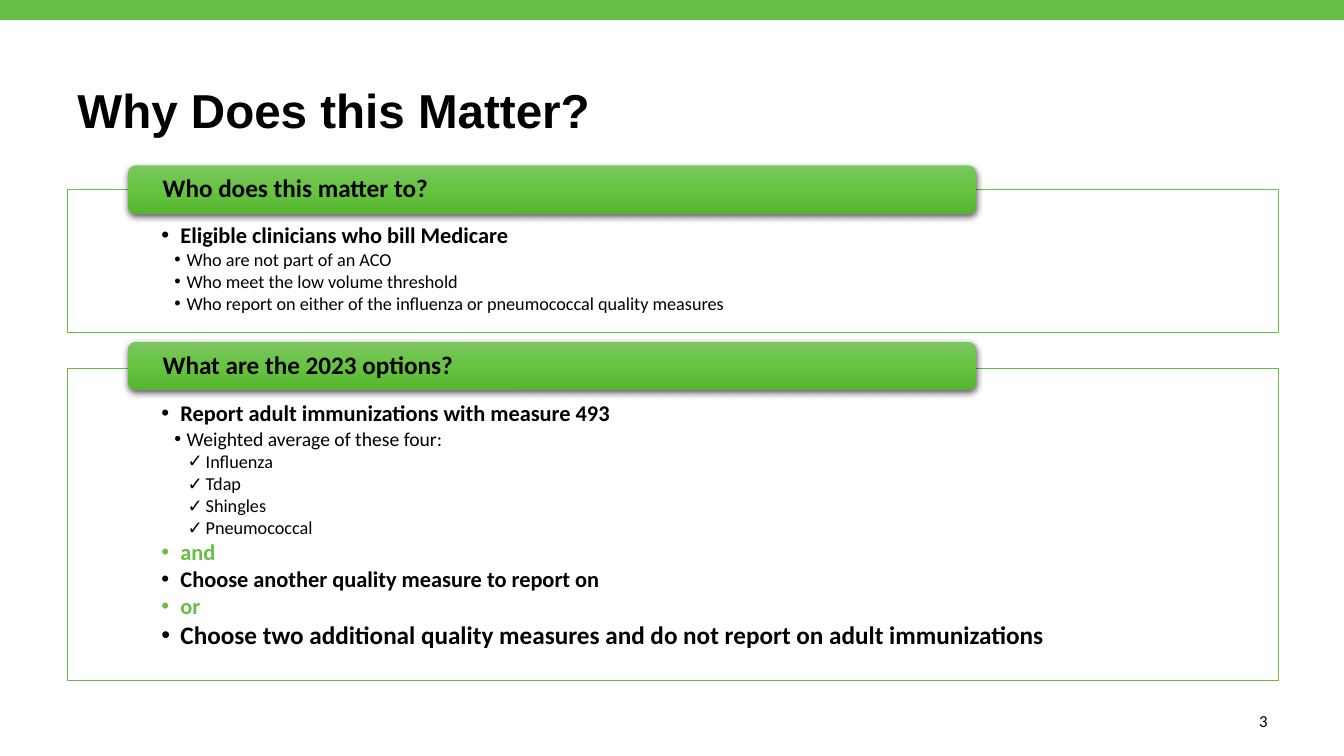
from lxml.etree import SubElement
from pptx import Presentation
from pptx.dml.color import RGBColor
from pptx.enum.shapes import MSO_SHAPE
from pptx.enum.text import MSO_ANCHOR, PP_ALIGN
from pptx.oxml.ns import qn
from pptx.util import Inches, Pt

GREEN, BLACK, WHITE = "69BE46", "000000", "FFFFFF"
HEADER_GRADIENT = [(0, "7BC662"), (50, "66C440"), (100, "58B532")]
BULLETS = {1: ("•", 0.19, -0.19), 2: ("•", 0.25, -0.12), 3: ("✓", 0.44, -0.18)}
LEFT, WIDTH = 0.67, 12.01

SECTIONS = [
    ("Who does this matter to?", 1.88, 1.42, 1.64, [
        (1, 16, BLACK, "Eligible clinicians who bill Medicare"),
        (2, 13, BLACK, "Who are not part of an ACO"),
        (2, 13, BLACK, "Who meet the low volume threshold"),
        (2, 13, BLACK, "Who report on either of the influenza or pneumococcal quality measures"),
    ]),
    ("What are the 2023 options?", 3.65, 3.1, 3.39, [
        (1, 16, BLACK, "Report adult immunizations with measure 493"),
        (2, 14, BLACK, "Weighted average of these four:"),
        (3, 13, BLACK, "Influenza"),
        (3, 13, BLACK, "Tdap"),
        (3, 13, BLACK, "Shingles"),
        (3, 13, BLACK, "Pneumococcal"),
        (1, 16, GREEN, "and"),
        (1, 16, BLACK, "Choose another quality measure to report on"),
        (1, 16, GREEN, "or"),
        (1, 18, BLACK, "Choose two additional quality measures and do not report on adult immunizations"),
    ]),
]


def color(value):
    return RGBColor.from_string(value)


class SlideBuilder:
    """Draws styled elements on the current slide."""

    def __init__(self, slide):
        self.shapes = slide.shapes

    def style(self, paragraph, text, size, ink=BLACK, bold=False, font="Calibri"):
        paragraph.text = text
        paragraph.font.name = font
        paragraph.font.size = Pt(size)
        paragraph.font.bold = bold
        paragraph.font.color.rgb = color(ink)

    def frame(self, box, insets, anchor):
        frame = box.text_frame
        frame.word_wrap = True
        frame.vertical_anchor = anchor
        frame.margin_left, frame.margin_top, frame.margin_right, frame.margin_bottom = map(Inches, insets)
        return frame

    def label(self, area, text, size, align=PP_ALIGN.LEFT, spacing=1.0, **look):
        box = self.shapes.add_textbox(*map(Inches, area))
        para = self.frame(box, (0.1, 0.05, 0.1, 0.05), MSO_ANCHOR.MIDDLE).paragraphs[0]
        para.alignment = align
        para.line_spacing = spacing
        self.style(para, text, size, **look)

    def block(self, area, fill=None, kind=MSO_SHAPE.RECTANGLE):
        shape = self.shapes.add_shape(kind, *map(Inches, area))
        shape.shadow.inherit = False
        shape.line.fill.background()
        if fill:
            shape.fill.solid()
            shape.fill.fore_color.rgb = color(fill)
        return shape

    def bullet(self, paragraph, level):
        mark, margin, indent = BULLETS[level]
        properties = paragraph._p.get_or_add_pPr()
        properties.set("marL", str(Inches(margin)))
        properties.set("indent", str(Inches(indent)))
        SubElement(properties, qn("a:buFont"), typeface="Arial")
        SubElement(properties, qn("a:buChar"), char=mark)

    def panel(self, top, height, items):
        panel = self.block((LEFT, top, WIDTH, height), WHITE)
        panel.line.color.rgb = color(GREEN)
        panel.line.width = Pt(0.5)
        white = panel._element.spPr.find(qn("a:solidFill"))[0]
        SubElement(white, qn("a:alpha"), val="90000")
        frame = self.frame(panel, (0.93, 0.34, 0.93, 0.12), MSO_ANCHOR.TOP)
        for index, (level, size, ink, text) in enumerate(items):
            para = frame.add_paragraph() if index else frame.paragraphs[0]
            para.level = level
            para.alignment = PP_ALIGN.LEFT
            para.line_spacing = 0.9
            para.space_after = Pt(round(size * 0.13, 2))
            self.bullet(para, level)
            self.style(para, text, size, ink, bold=level == 1)

    def header(self, top, text):
        header = self.block((1.27, top, 8.41, 0.48), kind=MSO_SHAPE.ROUNDED_RECTANGLE)
        header.fill.gradient()
        header.fill.gradient_angle = 270
        properties = header._element.spPr
        stops = properties.find(qn("a:gradFill")).find(qn("a:gsLst"))
        for stop in list(stops):
            stops.remove(stop)
        for position, value in HEADER_GRADIENT:
            stop = SubElement(stops, qn("a:gs"), pos=str(position * 1000))
            SubElement(stop, qn("a:srgbClr"), val=value)
        shadow = SubElement(properties.find(qn("a:effectLst")), qn("a:outerShdw"),
                            blurRad=str(Pt(4.5)), dist=str(Pt(1.5)), dir="5400000",
                            algn="ctr", rotWithShape="0")
        tint = SubElement(shadow, qn("a:srgbClr"), val=BLACK)
        SubElement(tint, qn("a:alpha"), val="63000")
        para = self.frame(header, (0.32, 0, 0.32, 0), MSO_ANCHOR.MIDDLE).paragraphs[0]
        para.alignment = PP_ALIGN.LEFT
        para.line_spacing = 0.9
        self.style(para, text, 18, bold=True)


def main():
    deck = Presentation()
    deck.slide_width, deck.slide_height = Inches(13.33), Inches(7.5)
    page = SlideBuilder(deck.slides.add_slide(deck.slide_layouts[6]))
    page.block((0, 0, 13.33, 0.2), GREEN)
    page.label((9.65, 6.95, 3.02, 0.4), "3", 12, PP_ALIGN.RIGHT)
    page.label((LEFT, 0.4, WIDTH, 1.45), "Why Does this Matter?", 34,
               spacing=0.9, bold=True, font="Arial")
    for heading, top, height, header_top, items in SECTIONS:
        page.panel(top, height, items)
        page.header(header_top, heading)
    deck.save("out.pptx")


if __name__ == "__main__":
    main()
